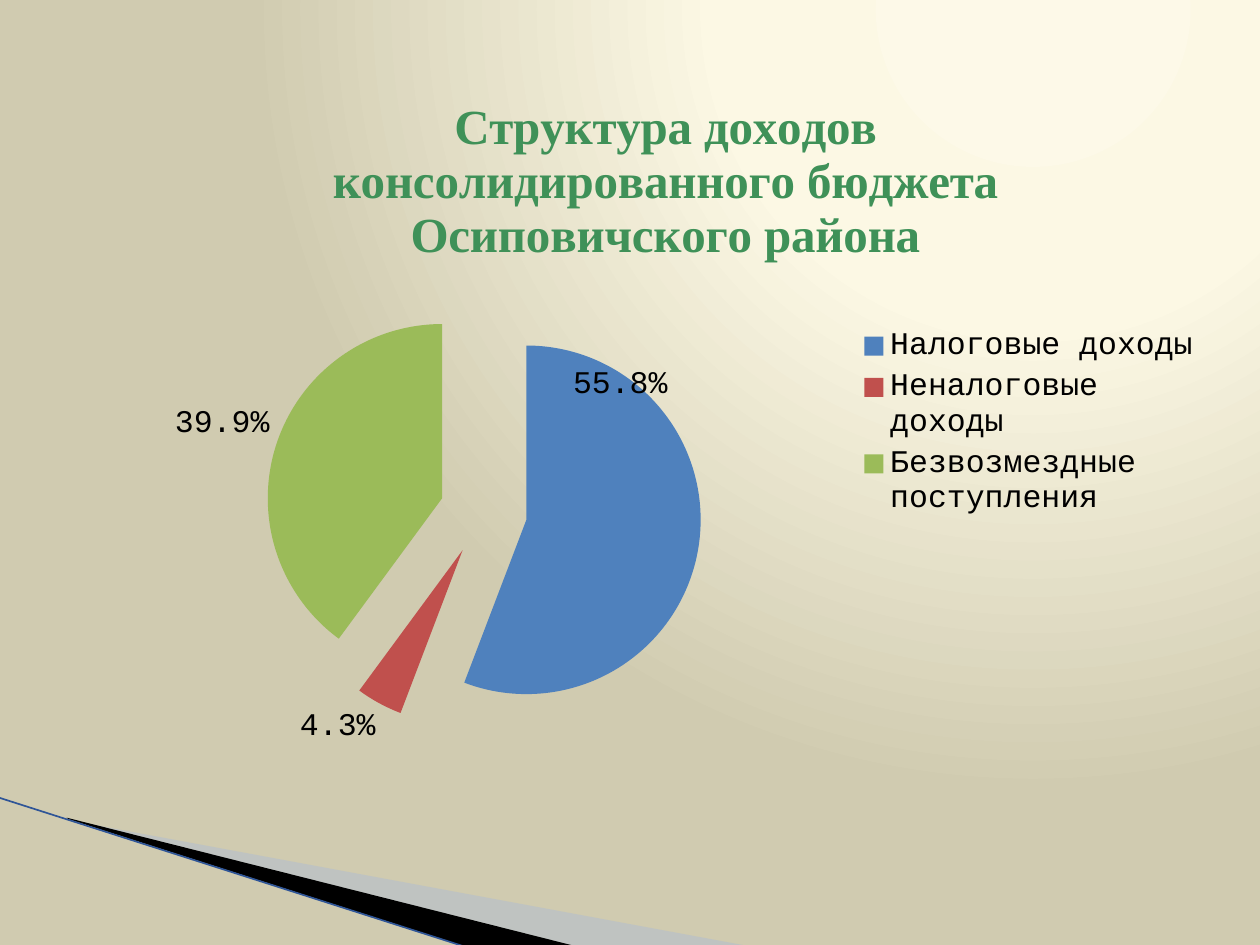
from dataclasses import dataclass
from typing import Optional

from lxml import etree
from pptx import Presentation
from pptx.chart.data import CategoryChartData
from pptx.dml.color import RGBColor
from pptx.enum.chart import XL_CHART_TYPE, XL_LABEL_POSITION, XL_LEGEND_POSITION
from pptx.enum.shapes import MSO_CONNECTOR
from pptx.oxml import parse_xml
from pptx.oxml.ns import nsdecls, qn
from pptx.util import Inches, Pt

PIE = XL_CHART_TYPE.PIE
OUTSIDE_END = XL_LABEL_POSITION.OUTSIDE_END
LEGEND_RIGHT = XL_LEGEND_POSITION.RIGHT
STRAIGHT = MSO_CONNECTOR.STRAIGHT
BLANK_LAYOUT = 6


@dataclass(frozen=True)
class Theme:
    background: tuple = ((0, "FDF9E8"), (40, "FCF8E4"), (100, "D0CBB0"))
    edge: str = "2F5597"
    title: str = "3F9158"
    text: str = "000000"
    title_font: str = "Times New Roman"
    body_font: str = "Courier New"
    title_size: int = 28
    body_size: int = 18


@dataclass(frozen=True)
class Wedge:
    points: tuple
    color: str
    alpha: Optional[int] = None


@dataclass(frozen=True)
class Income:
    name: str
    share: float
    color: str


THEME = Theme()
TITLE = "Структура доходов консолидированного бюджета Осиповичского района"
WEDGES = (
    Wedge(((0.55, 6.51), (5.95, 7.51), (4.56, 7.51), (0.55, 6.5)), "A7B9DB", 40),
    Wedge(((0.53, 6.49), (4.57, 7.51), (3.72, 7.52), (0.54, 6.5)), "000000"),
)
INCOMES = (
    Income("Налоговые доходы", 0.558, "4F81BD"),
    Income("Неналоговые доходы", 0.043, "C0504D"),
    Income("Безвозмездные поступления", 0.399, "9BBB59"),
)


def rgb(color: str) -> RGBColor:
    return RGBColor.from_string(color)


def set_background(slide) -> None:
    stops = "".join(
        f'<a:gs pos="{pos * 1000}"><a:srgbClr val="{color}"/></a:gs>'
        for pos, color in THEME.background
    )
    bg = parse_xml(
        f'<p:bg {nsdecls("p", "a")}><p:bgPr><a:gradFill><a:gsLst>{stops}</a:gsLst>'
        '<a:path path="circle"><a:fillToRect l="65000" t="0" r="0" b="98000"/></a:path>'
        "</a:gradFill><a:effectLst/></p:bgPr></p:bg>"
    )
    slide.element.cSld.insert(0, bg)


def add_wedge(slide, wedge: Wedge) -> None:
    start, *rest = [(Inches(x), Inches(y)) for x, y in wedge.points]
    builder = slide.shapes.build_freeform(*start)
    builder.add_line_segments(rest, close=True)
    s = builder.convert_to_shape()
    s.shadow.inherit = False
    s.line.fill.background()
    s.fill.solid()
    s.fill.fore_color.rgb = rgb(wedge.color)
    if wedge.alpha is not None:
        clr = s.element.spPr.find(".//" + qn("a:srgbClr"))
        etree.SubElement(clr, qn("a:alpha"), val=str(wedge.alpha * 1000))


def add_edge(slide) -> None:
    s = slide.shapes.add_connector(
        STRAIGHT, Inches(-0.01), Inches(6.33), Inches(3.71), Inches(7.52)
    )
    s.line.color.rgb = rgb(THEME.edge)
    s.line.width = Pt(0.95)
    etree.SubElement(s.element.spPr, qn("a:effectLst"))


def format_font(font, **values) -> None:
    color = values.pop("color")
    for key, value in values.items():
        setattr(font, key, value)
    font.color.rgb = rgb(color)


def set_layout(element, index: int, **values) -> None:
    """Place a chart part by fractions of the chart area."""
    old = element.find(qn("c:layout"))
    if old is not None:
        element.remove(old)
    layout = etree.Element(qn("c:layout"))
    manual = etree.SubElement(layout, qn("c:manualLayout"))
    for key, value in values.items():
        etree.SubElement(manual, qn(f"c:{key}"), val=str(value))
    element.insert(index, layout)


def add_income_chart(slide) -> None:
    data = CategoryChartData(number_format="0.0%")
    data.categories = [income.name for income in INCOMES]
    data.add_series(TITLE, [income.share for income in INCOMES])
    chart = slide.shapes.add_chart(
        PIE, Inches(0.91), Inches(0.52), Inches(8.74), Inches(5.67), data
    ).chart
    format_font(chart.font, name=THEME.body_font, size=Pt(THEME.body_size),
                color=THEME.text)

    # Title
    chart.has_title = True
    tf = chart.chart_title.text_frame
    tf.text = TITLE
    format_font(tf.paragraphs[0].runs[0].font, name=THEME.title_font,
                size=Pt(THEME.title_size), bold=True, color=THEME.title)
    chart.chart_title.include_in_layout = False
    set_layout(chart.chart_title._element, 1,
               xMode="edge", yMode="edge", x=0.19, y=0.03)

    # Legend
    chart.has_legend = True
    legend = chart.legend
    legend.position = LEGEND_RIGHT
    legend.include_in_layout = False
    set_layout(legend._element, 1, xMode="edge", yMode="edge",
               x=0.67, y=0.36, w=0.32, h=0.28)

    # Exploded slices
    plot = chart.plots[0]
    plot.vary_by_categories = True
    set_layout(plot._element.getparent(), 0, layoutTarget="inner",
               xMode="edge", yMode="edge", x=0.13, y=0.32, w=0.41, h=0.61)
    series = plot.series[0]
    explosion = etree.Element(qn("c:explosion"), val="25")
    series._element.find(qn("c:tx")).addnext(explosion)
    for i, income in enumerate(INCOMES):
        fill = series.points[i].format.fill
        fill.solid()
        fill.fore_color.rgb = rgb(income.color)

    # Labels, the first one shifted from its usual place
    label_format = {"show_value": True, "show_percentage": False,
                    "number_format": "0.0%", "number_format_is_linked": False,
                    "position": OUTSIDE_END}
    for key, value in label_format.items():
        setattr(series.data_labels, key, value)
    label = series.points[0].data_label
    label.position = OUTSIDE_END
    dLbl = series.data_labels._element.find(qn("c:dLbl"))
    set_layout(dLbl, 1, x=-0.12, y=-0.26)


def main() -> None:
    prs = Presentation()
    prs.slide_width, prs.slide_height = Inches(10), Inches(7.5)
    slide = prs.slides.add_slide(prs.slide_layouts[BLANK_LAYOUT])
    set_background(slide)
    # Corner decoration
    for wedge in WEDGES:
        add_wedge(slide, wedge)
    add_edge(slide)
    add_income_chart(slide)
    prs.save("out.pptx")


if __name__ == "__main__":
    main()
